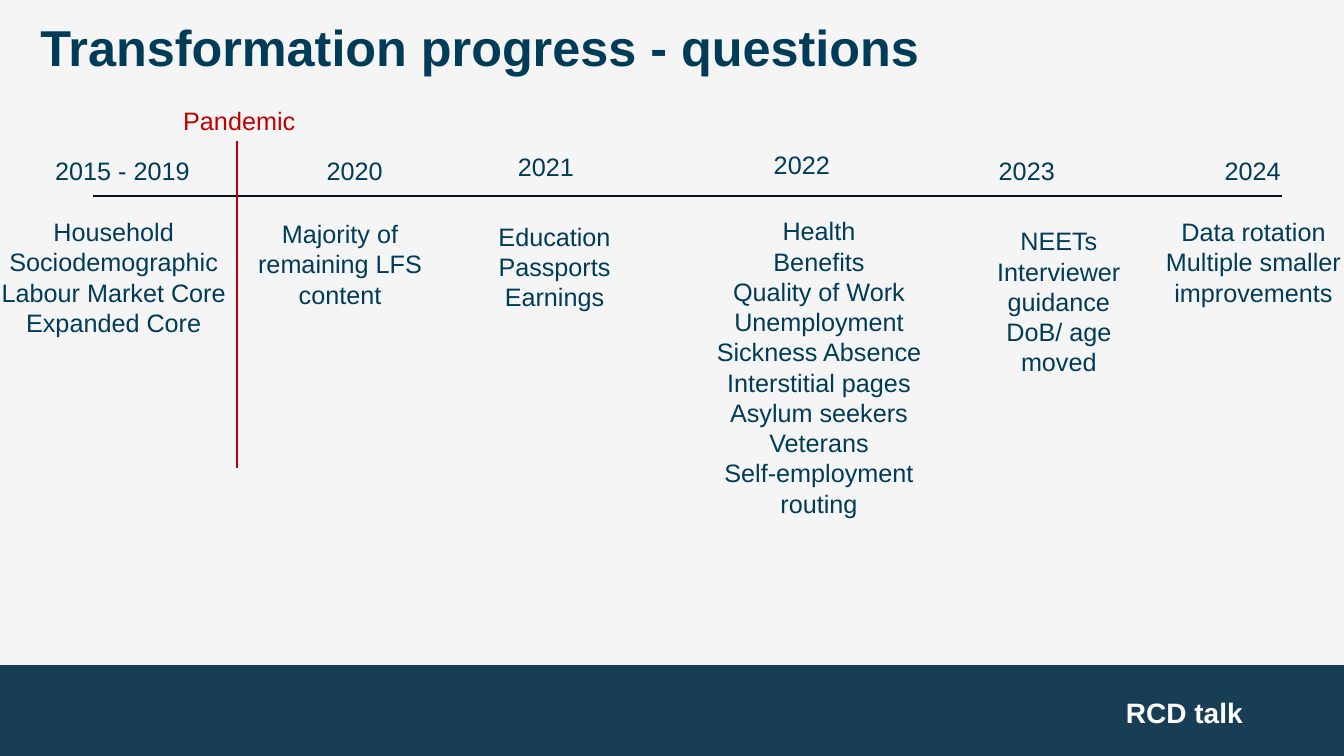
from lxml import etree
from pptx import Presentation
from pptx.dml.color import RGBColor
from pptx.enum.shapes import MSO_CONNECTOR, MSO_SHAPE
from pptx.enum.text import MSO_ANCHOR, PP_ALIGN
from pptx.oxml.ns import qn
from pptx.util import Cm, Pt

LEFT, CENTER, RIGHT = PP_ALIGN.LEFT, PP_ALIGN.CENTER, PP_ALIGN.RIGHT
TOP, MIDDLE = MSO_ANCHOR.TOP, MSO_ANCHOR.MIDDLE
STRAIGHT = MSO_CONNECTOR.STRAIGHT
RECTANGLE = MSO_SHAPE.RECTANGLE

COLORS = {
    "background": "F5F5F6",
    "footer": "183E56",
    "title": "003C57",
    "text": "003B57",
    "axis": "041819",
    "pandemic": "C00000",
    "white": "FFFFFF",
}
SLIDE_WIDTH, SLIDE_HEIGHT = 33.87, 19.05
FOOTER_HEIGHT = 2.29
LINE_HEIGHT, PADDING = 0.77, 0.25
AXIS_Y = 4.95
PANDEMIC_X = 5.97

TITLE = "Transformation progress - questions"
FOOTER = "RCD talk"
PANDEMIC = "Pandemic"

# label, left, top, width
YEARS = [
    ("2015 - 2019", 1.14, 3.78, 4.29),
    ("2020", 7.98, 3.78, 2.51),
    ("2021", 12.8, 3.68, 2.51),
    ("2022", 19.25, 3.63, 2.51),
    ("2023", 24.92, 3.78, 2.51),
    ("2024", 30.61, 3.78, 2.51),
]
# topics, left, top, width, height in lines
TOPICS = [
    (["Household", "Sociodemographic", "Labour Market Core", "Expanded Core"],
     -1.35, 5.33, 8.43, 4),
    (["Majority of remaining LFS content"], 5.99, 5.38, 5.16, 3),
    (["Education", "Passports", "Earnings"], 11.18, 5.44, 5.59, 3),
    (["Health", "Benefits", "Quality of Work", "Unemployment",
      "Sickness Absence", "Interstitial pages", "Asylum seekers", "Veterans",
      "Self-employment routing"], 17.73, 5.31, 5.82, 11),
    (["NEETs", "Interviewer", "guidance", "DoB/ age moved"],
     24.31, 5.56, 4.75, 6),
    (["Data rotation", "Multiple smaller improvements"],
     28.68, 5.33, 5.82, 4),
]


def rgb(name):
    return RGBColor.from_string(COLORS[name])


def add_text(slide, lines, left, top, width, height, color="text", size=18,
             bold=False, align=LEFT, anchor=TOP, margins=None, spacing=None):
    """Add a wrapped text box with one paragraph per line."""
    box = slide.shapes.add_textbox(Cm(left), Cm(top), Cm(width), Cm(height))
    frame = box.text_frame
    frame.word_wrap = True
    frame.vertical_anchor = anchor
    for side, margin in (margins or {}).items():
        setattr(frame, f"margin_{side}", Cm(margin))
    frame.text = "\n".join(lines)
    font_format = {"name": "Arial", "size": Pt(size), "bold": bold}
    for paragraph in frame.paragraphs:
        paragraph.alignment = align
        if spacing:
            paragraph.line_spacing = spacing
        for run in paragraph.runs:
            for attribute, value in font_format.items():
                setattr(run.font, attribute, value)
            run.font.color.rgb = rgb(color)


def add_line(slide, start, end, color, width):
    connector = slide.shapes.add_connector(
        STRAIGHT, *(Cm(value) for value in (*start, *end)))
    connector.line.color.rgb = rgb(color)
    connector.line.width = Pt(width)
    etree.SubElement(connector._element.spPr, qn("a:effectLst"))


def add_footer(slide):
    band = slide.shapes.add_shape(
        RECTANGLE, 0, Cm(SLIDE_HEIGHT - FOOTER_HEIGHT),
        Cm(SLIDE_WIDTH), Cm(FOOTER_HEIGHT))
    band.shadow.inherit = False
    band.fill.solid()
    band.fill.fore_color.rgb = rgb("footer")
    band.line.fill.background()
    add_text(slide, [FOOTER], 20.9, 17.37, 10.67, 1.02, "white", 20, True,
             RIGHT, MIDDLE, {"bottom": 0})


def main():
    presentation = Presentation()
    presentation.slide_width = Cm(SLIDE_WIDTH)
    presentation.slide_height = Cm(SLIDE_HEIGHT)
    slide = presentation.slides.add_slide(presentation.slide_layouts[6])
    slide.background.fill.solid()
    slide.background.fill.fore_color.rgb = rgb("background")

    add_footer(slide)
    add_text(slide, [TITLE], 1.02, 0.51, 29.21, 1.47, "title", 36, True,
             margins=dict.fromkeys(("left", "top", "right", "bottom"), 0),
             spacing=0.95)
    add_line(slide, (2.34, AXIS_Y), (32.31, AXIS_Y), "axis", 1.5)
    for label, left, top, width in YEARS:
        add_text(slide, [label], left, top, width, LINE_HEIGHT + PADDING)
    for topics, left, top, width, line_count in TOPICS:
        add_text(slide, topics, left, top, width,
                 line_count * LINE_HEIGHT + PADDING, align=CENTER)
    add_line(slide, (PANDEMIC_X, 3.56), (PANDEMIC_X, 11.79), "pandemic", 1)
    add_text(slide, [PANDEMIC], 3.78, 2.54, 4.5, LINE_HEIGHT + PADDING,
             "pandemic", align=CENTER)
    presentation.save("out.pptx")


if __name__ == "__main__":
    main()
